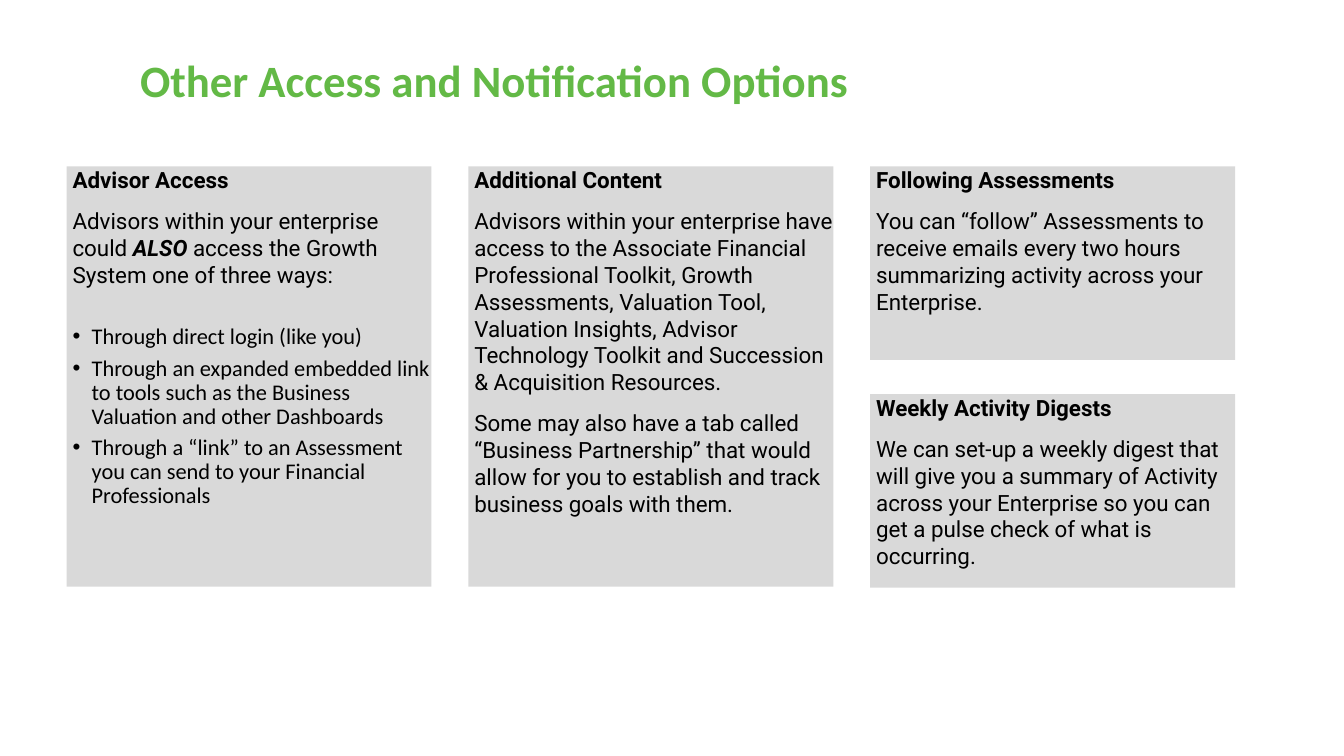
from dataclasses import dataclass

from lxml import etree
from pptx import Presentation
from pptx.dml.color import RGBColor
from pptx.enum import shapes, text
from pptx.oxml.ns import qn
from pptx.util import Inches, Pt


@dataclass(frozen=True)
class Theme:
    title_color: RGBColor = RGBColor(0x63, 0xB9, 0x46)
    panel_fill: RGBColor = RGBColor(0xD9, 0xD9, 0xD9)
    text_color: RGBColor = RGBColor(0, 0, 0)
    title_font: str = "Calibri"
    body_font: str = "Roboto"
    bullet_font: str = "Calibri"
    title_size: int = 32
    body_size: int = 16


@dataclass(frozen=True)
class Panel:
    column: int
    top: float
    height: float
    heading: str
    body: tuple[str, ...]
    bullets: tuple[str, ...] = ()


THEME = Theme()
LEFT, TOP, WIDTH, COLUMN_STEP = 0.66, 1.65, 3.62, 3.985
TALL, SHORT, ROW_STEP = 4.17, 1.92, 2.26
INDENT, BULLET_INDENT, BULLET_HANG = 0.06, 0.25, 0.19
EMPHASIS = "*"

PANELS = (
    Panel(0, TOP, TALL, "Advisor Access",
          ("Advisors within your enterprise could *ALSO* access the Growth System one of three ways:",),
          ("Through direct login (like you)",
           "Through an expanded embedded link to tools such as the Business Valuation and other Dashboards",
           "Through a “link” to an Assessment you can send to your Financial Professionals")),
    Panel(1, TOP, TALL, "Additional Content",
          ("Advisors within your enterprise have access to the Associate Financial Professional Toolkit, "
           "Growth Assessments, Valuation Tool, Valuation Insights, Advisor Technology Toolkit and "
           "Succession & Acquisition Resources.",
           "Some may also have a tab called “Business Partnership” that would allow for you to "
           "establish and track business goals with them.")),
    Panel(2, TOP, SHORT, "Following Assessments",
          ("You can “follow” Assessments to receive emails every two hours summarizing activity "
           "across your Enterprise.",)),
    Panel(2, TOP + ROW_STEP, SHORT, "Weekly Activity Digests",
          ("We can set-up a weekly digest that will give you a summary of Activity across your "
           "Enterprise so you can get a pulse check of what is occurring.",)),
)


def set_font(font, name: str, size: int, color: RGBColor, bold: bool = False) -> None:
    font.name, font.size, font.bold = name, Pt(size), bold
    font.color.rgb = color


def set_indent(paragraph, margin: float, hanging: float = 0) -> None:
    properties = paragraph._p.get_or_add_pPr()
    properties.set("marL", str(Inches(margin)))
    properties.set("indent", str(-Inches(hanging)))


def add_runs(paragraph, content: str) -> None:
    """Write the content, with text between emphasis marks in bold italic."""
    for index, part in enumerate(content.split(EMPHASIS)):
        run = paragraph.add_run()
        run.text = part
        if index % 2:
            run.font.bold = run.font.italic = True


def add_text(frame, content: str, space: float, bold: bool = False) -> None:
    paragraph = frame.add_paragraph() if space else frame.paragraphs[0]
    paragraph.alignment = text.PP_ALIGN.LEFT
    paragraph.space_before = Pt(space)
    set_indent(paragraph, INDENT)
    set_font(paragraph.font, THEME.body_font, THEME.body_size, THEME.text_color, bold)
    add_runs(paragraph, content)


def add_bullet(frame, content: str, space: float) -> None:
    paragraph = frame.add_paragraph()
    paragraph.alignment = text.PP_ALIGN.LEFT
    paragraph.level = 1
    paragraph.line_spacing = 0.9
    paragraph.space_before = Pt(space)
    set_indent(paragraph, BULLET_INDENT, BULLET_HANG)
    properties = paragraph._p.get_or_add_pPr()
    etree.SubElement(properties, qn("a:buFont")).set("typeface", "Arial")
    etree.SubElement(properties, qn("a:buChar")).set("char", "•")
    set_font(paragraph.font, THEME.bullet_font, THEME.body_size, THEME.text_color)
    add_runs(paragraph, content)


def add_panel(slide, panel: Panel) -> None:
    shape = slide.shapes.add_shape(
        shapes.MSO_SHAPE.RECTANGLE, Inches(LEFT + panel.column * COLUMN_STEP),
        Inches(panel.top), Inches(WIDTH), Inches(panel.height))
    shape.shadow.inherit = False
    shape.fill.solid()
    shape.fill.fore_color.rgb = THEME.panel_fill
    shape.line.fill.background()
    frame = shape.text_frame
    frame.word_wrap = True
    frame.vertical_anchor = text.MSO_ANCHOR.TOP
    frame.margin_left = frame.margin_right = frame.margin_top = frame.margin_bottom = 0
    add_text(frame, panel.heading, 0, bold=True)
    for content in panel.body:
        add_text(frame, content, 10)
    for index, content in enumerate(panel.bullets):
        add_bullet(frame, content, 5 if index else 27)


def add_title(slide, content: str) -> None:
    box = slide.shapes.add_textbox(Inches(1.29), Inches(0.4), Inches(11.12), Inches(0.85))
    frame = box.text_frame
    frame.word_wrap = True
    frame.vertical_anchor = text.MSO_ANCHOR.MIDDLE
    paragraph = frame.paragraphs[0]
    paragraph.text = content
    paragraph.line_spacing = 0.9
    set_font(paragraph.font, THEME.title_font, THEME.title_size, THEME.title_color, True)


def main() -> None:
    presentation = Presentation()
    presentation.slide_width, presentation.slide_height = Inches(13.33), Inches(7.5)
    slide = presentation.slides.add_slide(presentation.slide_layouts[6])
    add_title(slide, "Other Access and Notification Options")
    for panel in PANELS:
        add_panel(slide, panel)
    presentation.save("out.pptx")


if __name__ == "__main__":
    main()
